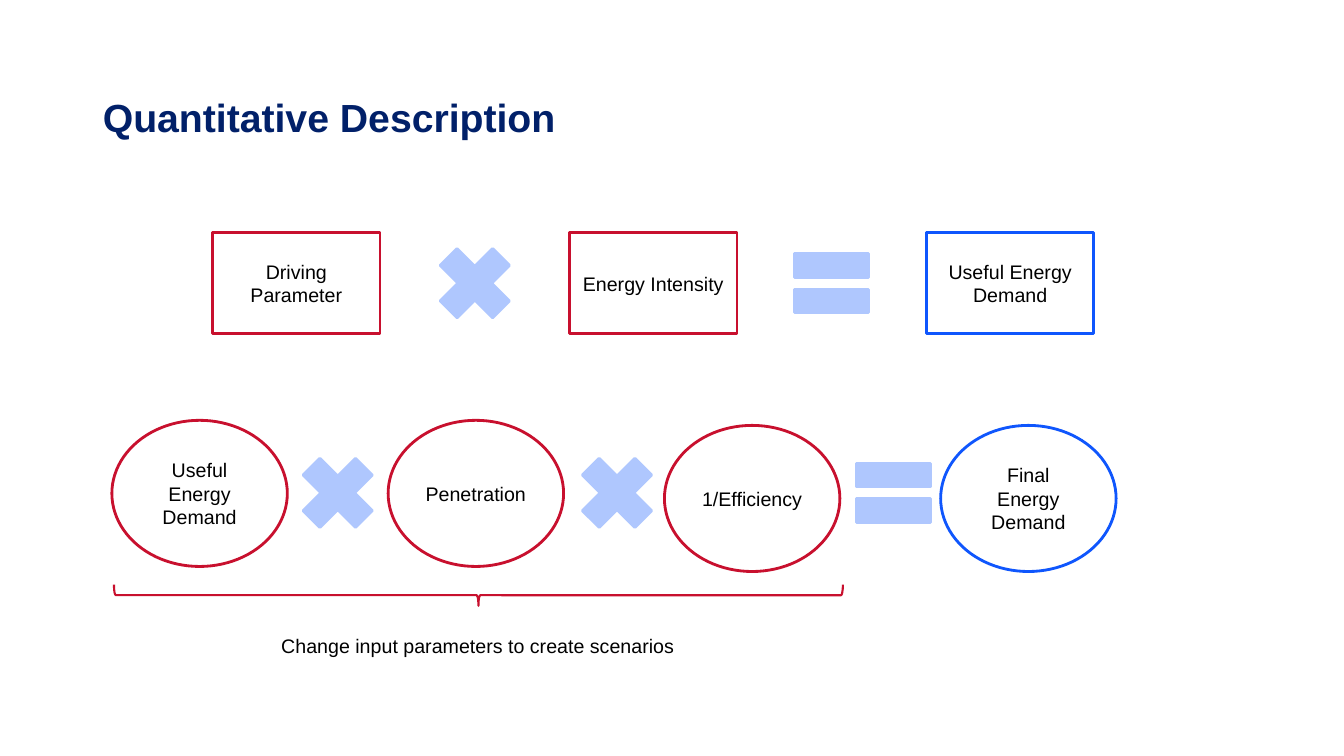
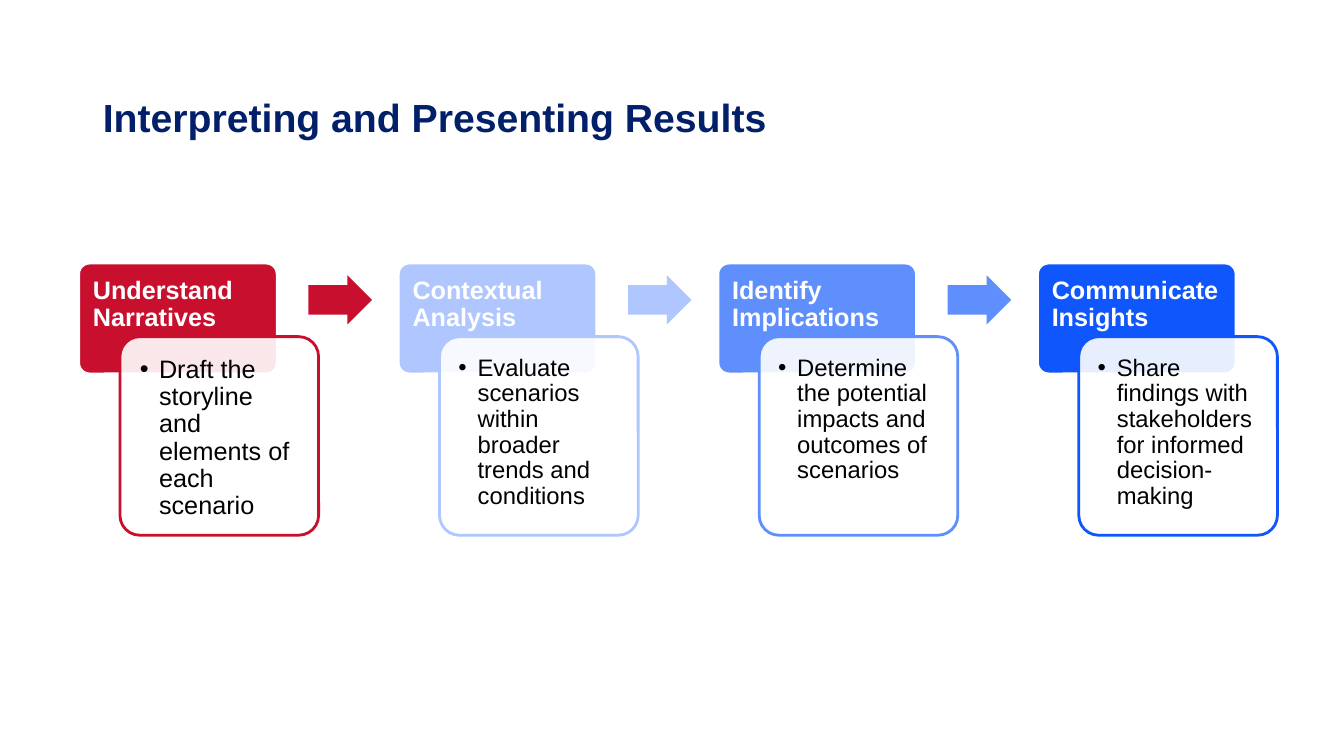
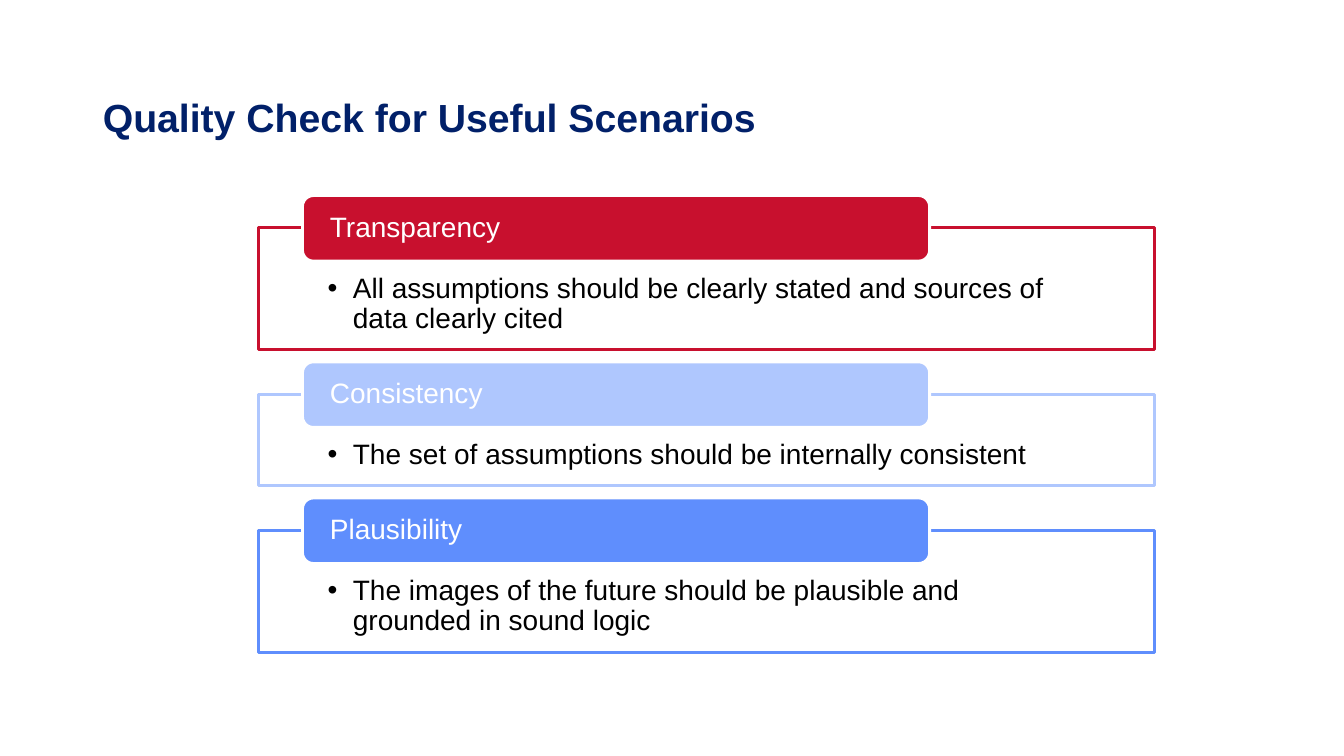
"""Build three slides on describing, interpreting and checking energy scenarios."""
from lxml.etree import SubElement
from pptx import Presentation
from pptx.dml.color import RGBColor
from pptx.enum.shapes import MSO_SHAPE
from pptx.enum.text import MSO_ANCHOR, MSO_AUTO_SIZE, PP_ALIGN
from pptx.oxml.ns import qn
from pptx.util import Pt

SCALE = 9144
FONT = "Arial"
COLORS = {
    "navy": "012069",
    "red": "C8102E",
    "pale": "AFC7FE",
    "medium": "5F8EFD",
    "blue": "0F56FD",
    "white": "FFFFFF",
    "black": "000000",
}


def add_box(slide, kind, box, fill=None, line=None, width=2, opacity=100):
    """Add a preset shape at (left, top, width, height) in px."""
    shape = slide.shapes.add_shape(kind, *(value * SCALE for value in box))
    shape.shadow.inherit = False
    if fill:
        shape.fill.solid()
        shape.fill.fore_color.rgb = RGBColor.from_string(COLORS[fill])
        if opacity < 100:
            color = shape.fill._xPr.find(qn("a:solidFill"))[0]
            SubElement(color, qn("a:alpha"), val=str(opacity * 1000))
    else:
        shape.fill.background()
    if line:
        shape.line.color.rgb = RGBColor.from_string(COLORS[line])
        shape.line.width = Pt(width)
    else:
        shape.line.fill.background()
    return shape


def write_text(shape, text, size, color="black", bold=False, align=PP_ALIGN.LEFT,
               anchor=MSO_ANCHOR.TOP, insets=(10, 5, 10, 5), spacing=0.9, bullet_indent=0):
    """Fill a shape with one formatted paragraph; insets run left, top, right, bottom."""
    frame = shape.text_frame
    frame.word_wrap = True
    frame.auto_size = MSO_AUTO_SIZE.NONE
    frame.vertical_anchor = anchor
    frame.margin_left, frame.margin_top, frame.margin_right, frame.margin_bottom = (
        inset * SCALE for inset in insets)
    frame.text = text
    paragraph = frame.paragraphs[0]
    paragraph.alignment = align
    paragraph.line_spacing = spacing
    if bullet_indent:
        properties = paragraph._p.get_or_add_pPr()
        properties.set("marL", str(bullet_indent * SCALE))
        properties.set("indent", str(-bullet_indent * SCALE))
        bullet_color = SubElement(properties, qn("a:buClr"))
        SubElement(bullet_color, qn("a:srgbClr"), val=COLORS["black"])
        SubElement(properties, qn("a:buFont"), typeface=FONT)
        SubElement(properties, qn("a:buChar"), char="•")
    paragraph.font.name = FONT
    paragraph.font.size = Pt(size)
    paragraph.font.bold = bold
    paragraph.font.color.rgb = RGBColor.from_string(COLORS[color])


presentation = Presentation()
presentation.slide_width = 1333 * SCALE
presentation.slide_height = 750 * SCALE

slides = []
for heading in ("Quantitative Description", "Interpreting and Presenting Results",
                "Quality Check for Useful Scenarios"):
    slide = presentation.slides.add_slide(presentation.slide_layouts[5])
    title = slide.shapes.title
    title.left, title.top, title.width, title.height = (
        value * SCALE for value in (92, 0, 1150, 145))
    write_text(title, heading, 28, "navy", bold=True, anchor=MSO_ANCHOR.BOTTOM)
    slides.append(slide)
equation_slide, process_slide, quality_slide = slides

terms = [
    (MSO_SHAPE.RECTANGLE, (211 + 354 * column, 231, 166, 100), label, color)
    for column, (label, color) in enumerate([
        ("Driving Parameter", "red"),
        ("Energy Intensity", "red"),
        ("Useful Energy Demand", "blue"),
    ])
] + [
    (MSO_SHAPE.OVAL, (111 + 274 * column, top, 174, 145), label, color)
    for column, (label, color, top) in enumerate([
        ("Useful Energy Demand", "red", 417),
        ("Penetration", "red", 417),
        ("1/Efficiency", "red", 422),
        ("Final Energy Demand", "blue", 422),
    ])
]
for kind, box, label, color in terms:
    term = add_box(equation_slide, kind, box, "white", color)
    write_text(term, label, 14, align=PP_ALIGN.CENTER, anchor=MSO_ANCHOR.MIDDLE, spacing=1.0)

for kind, left, top in [
    (MSO_SHAPE.MATH_MULTIPLY, 421, 231),
    (MSO_SHAPE.MATH_EQUAL, 775, 231),
    (MSO_SHAPE.MATH_MULTIPLY, 285, 439),
    (MSO_SHAPE.MATH_MULTIPLY, 562, 439),
    (MSO_SHAPE.MATH_EQUAL, 836, 439),
]:
    add_box(equation_slide, kind, (left, top, 100, 100), "pale", "pale")

brace = add_box(equation_slide, MSO_SHAPE.RIGHT_BRACE, (464, 229, 21, 723), line="red", width=1.5)
brace.rotation = 90
caption = equation_slide.shapes.add_textbox(*(value * SCALE for value in (269, 624, 412, 34)))
write_text(caption, "Change input parameters to create scenarios", 14, spacing=1.0)
caption.text_frame.word_wrap = False
caption.text_frame.auto_size = MSO_AUTO_SIZE.SHAPE_TO_FIT_TEXT

steps = [
    ("Understand Narratives", "Draft the storyline and elements of each scenario", "red", 18, 14),
    ("Contextual Analysis", "Evaluate scenarios within broader trends and conditions", "pale", 17, 13),
    ("Identify Implications", "Determine the potential impacts and outcomes of scenarios", "medium", 17, 13),
    ("Communicate Insights", "Share findings with stakeholders for informed decision-making", "blue", 17, 13),
]
for column, (heading, detail, color, size, inset) in enumerate(steps):
    left = 78 + 317 * column
    header = add_box(process_slide, MSO_SHAPE.ROUNDED_RECTANGLE, (left, 261, 197, 110), color, "white")
    header.adjustments[0] = 0.1
    write_text(header, heading, 18, "white", bold=True, insets=(11, 11, 11, 7))
    card = add_box(process_slide, MSO_SHAPE.ROUNDED_RECTANGLE, (left + 41, 334, 197, 197),
                   "white", color, opacity=90)
    card.adjustments[0] = 0.1
    write_text(card, detail, size, insets=(inset,) * 4, bullet_indent=19)
    if column < len(steps) - 1:
        arrow = add_box(process_slide, MSO_SHAPE.RIGHT_ARROW, (left + 228, 273, 63, 49), color)
        arrow.adjustments[0] = 0.6

top = 226
for heading, detail, color, height in [
    ("Transparency", "All assumptions should be clearly stated and sources of data clearly cited", "red", 121),
    ("Consistency", "The set of assumptions should be internally consistent", "pale", 91),
    ("Plausibility", "The images of the future should be plausible and grounded in sound logic", "medium", 121),
]:
    panel = add_box(quality_slide, MSO_SHAPE.RECTANGLE, (256, top, 889, height),
                    "white", color, opacity=90)
    write_text(panel, detail, 20, insets=(69, 46, 69, 16), bullet_indent=25)
    tab = add_box(quality_slide, MSO_SHAPE.ROUNDED_RECTANGLE, (300, top - 32, 622, 65), color, "white")
    write_text(tab, heading, 20, "white", anchor=MSO_ANCHOR.MIDDLE, insets=(24, 0, 24, 0))
    top += height + 44

presentation.save("out.pptx")
